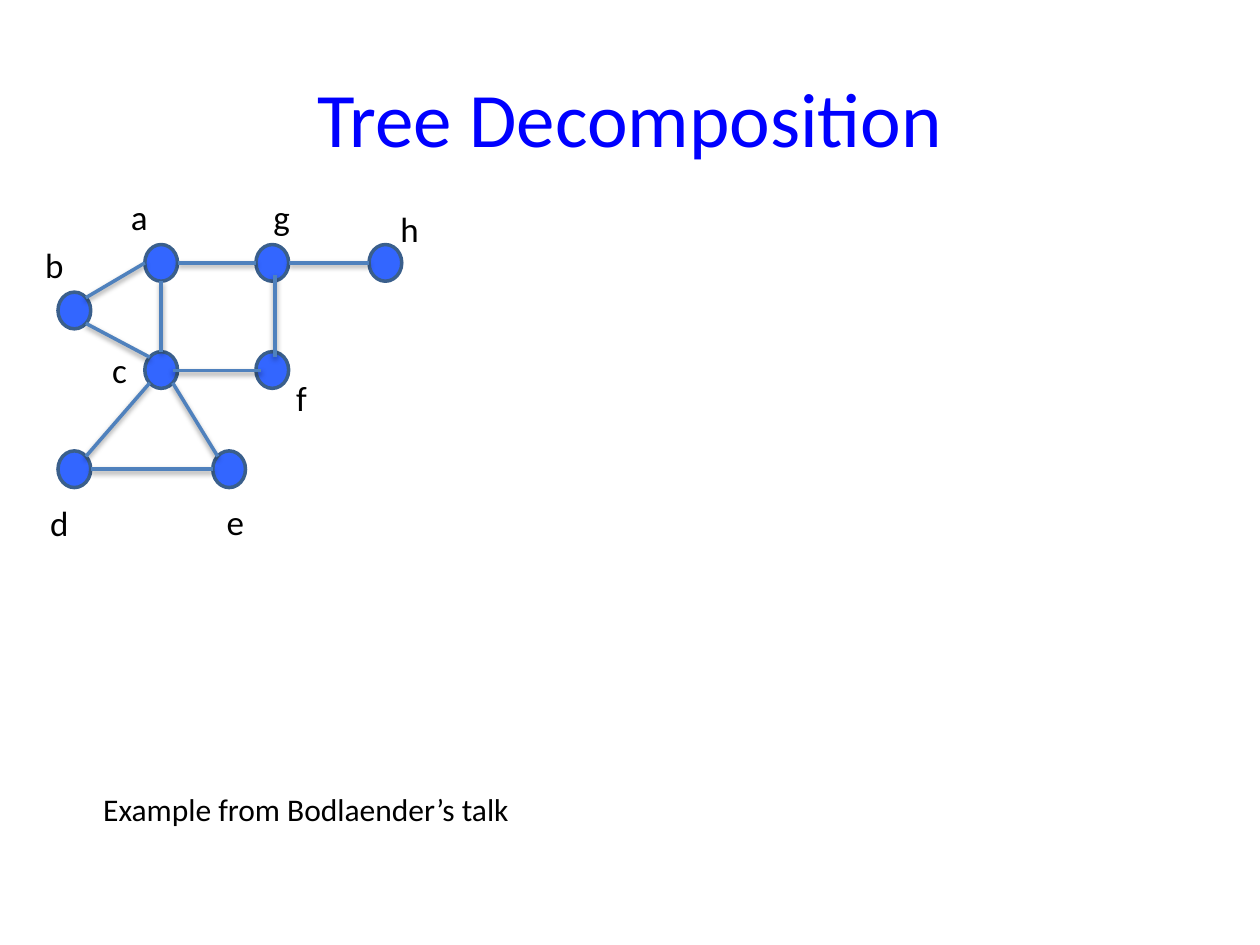
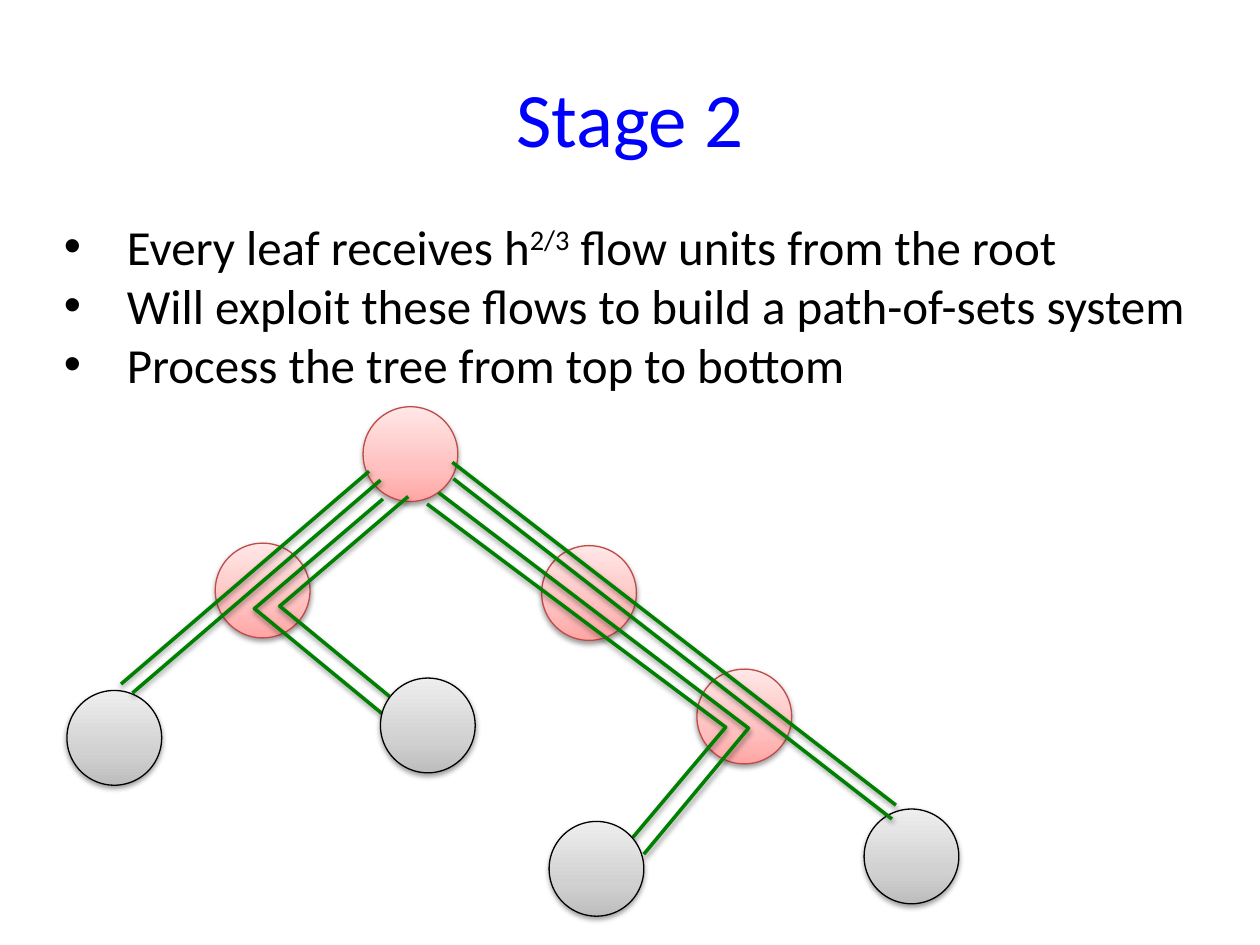
from lxml import etree
from pptx import Presentation
from pptx.dml.color import RGBColor
from pptx.enum import shapes, text
from pptx.oxml import ns
from pptx.util import Cm, Pt

FONT = "Calibri"
TITLE_BLUE = RGBColor(0x00, 0x00, 0xFF)
BLACK = RGBColor(0x00, 0x00, 0x00)
VERTEX_FILL = RGBColor(0x33, 0x66, 0xFF)
VERTEX_LINE = RGBColor(0x3A, 0x5F, 0x8C)
EDGE_BLUE = RGBColor(0x4F, 0x81, 0xBD)
FLOW_GREEN = RGBColor(0x00, 0x80, 0x00)
INNER_LINE = RGBColor(0xBF, 0x4C, 0x48)

# Gradient colours at 0, 35 and 100 percent, from bottom to top
STOPS = (0, 35, 100)
INNER_GRADIENT = [RGBColor(0xFF, 0xA6, 0xA5), RGBColor(0xFF, 0xC0, 0xBF), RGBColor(0xFF, 0xE7, 0xE7)]
LEAF_GRADIENT = [RGBColor(0xBD, 0xBD, 0xBD), RGBColor(0xD1, 0xD1, 0xD1), RGBColor(0xEE, 0xEE, 0xEE)]

# Graph on slide 1, in cm: left, top of each vertex, then left, top of its label
VERTEX_W, VERTEX_H = 0.66, 0.74
VERTICES = {
    "a": (2.92, 4.93, 2.39, 3.81),
    "b": (1.17, 5.89, 0.66, 4.78),
    "c": (2.92, 7.09, 2.01, 6.91),
    "d": (1.17, 9.09, 0.76, 9.98),
    "e": (4.29, 9.09, 4.32, 9.96),
    "f": (5.16, 7.09, 5.72, 7.47),
    "g": (5.16, 4.93, 5.26, 3.81),
    "h": (7.44, 4.93, 7.82, 4.06),
}
# Each edge leaves and enters a vertex at a compass point
EDGES = ["d NE c SW", "d E e W", "c SE e NW", "a E g W", "g E h W",
         "b NE a W", "b SE c NW", "a S c N"]
# Edges at f reach slightly inside their vertices
F_EDGES = [((3.48, 7.47), (5.26, 7.47)), ((5.54, 5.54), (5.54, 7.19))]

# Tree on slide 2, in cm
NODE_SIZE = 1.91
INNER_NODES = [(4.34, 10.95), (7.32, 8.2), (14.05, 13.49), (10.92, 11)]
BACK_LEAVES = [(1.35, 13.92), (17.42, 16.31)]
FRONT_LEAVES = [(11.07, 16.56), (7.67, 13.67)]
STRAIGHT_FLOWS = [
    ((7.44, 9.5), (2.44, 13.79)),
    ((7.67, 9.68), (2.67, 13.97)),
    ((9.12, 9.32), (18.06, 16.23)),
    ((9.14, 9.65), (17.98, 16.51)),
]
BENT_FLOWS = [
    [(8.84, 9.93), (15.09, 14.68), (12.98, 17.22)],
    [(8.61, 10.16), (14.63, 14.66), (12.6, 17.07)],
    [(7.72, 10.06), (5.13, 12.27), (7.72, 14.4)],
    [(8.23, 10.01), (5.64, 12.22), (8.23, 14.35)],
]


def add_child(parent, tag, **attributes):
    child = etree.SubElement(parent, ns.qn(tag))
    for key, value in attributes.items():
        child.set(key, str(value))
    return child


def add_text(slide, paragraphs, left, top, width, height, size=20, color=BLACK,
             align=None, anchor=text.MSO_ANCHOR.TOP, bullets=False):
    """Text between ^ marks is raised."""
    frame = slide.shapes.add_textbox(Cm(left), Cm(top), Cm(width), Cm(height)).text_frame
    frame.word_wrap = True
    frame.vertical_anchor = anchor
    for index, words in enumerate(paragraphs):
        paragraph = frame.paragraphs[0] if index == 0 else frame.add_paragraph()
        paragraph.alignment = align
        if bullets:
            props = paragraph._p.get_or_add_pPr()
            props.set("marL", str(Cm(1.27)))
            props.set("indent", str(-Cm(1.27)))
            add_child(props, "a:buFont", typeface="Arial")
            add_child(props, "a:buChar", char="•")
        for part, piece in enumerate(words.split("^")):
            run = paragraph.add_run()
            run.text = piece
            run.font.name, run.font.size = FONT, Pt(size)
            run.font.color.rgb = color
            if part % 2:
                run.font._element.set("baseline", "30000")


def add_title(slide, words):
    add_text(slide, [words], 1.27, 0.76, 22.86, 3.18, size=44, color=TITLE_BLUE,
             align=text.PP_ALIGN.CENTER, anchor=text.MSO_ANCHOR.MIDDLE)


def set_line(shape, color, width):
    shape.line.color.rgb = color
    shape.line.width = Pt(width)


def add_shadow(shape):
    properties = shape._element.spPr
    effects = properties.find(ns.qn("a:effectLst"))
    if effects is None:
        effects = add_child(properties, "a:effectLst")
    shadow = add_child(effects, "a:outerShdw", blurRad=Pt(3.1), dist=Pt(1.6),
                       dir=5400000, rotWithShape=0)
    add_child(add_child(shadow, "a:srgbClr", val=BLACK), "a:alpha", val=38000)


def add_ellipse(slide, left, top, width, height, line_color, line_width):
    ellipse = slide.shapes.add_shape(shapes.MSO_SHAPE.OVAL, Cm(left), Cm(top), Cm(width), Cm(height))
    set_line(ellipse, line_color, line_width)
    ellipse.shadow.inherit = False
    return ellipse


def add_vertex(slide, name):
    left, top, label_left, label_top = VERTICES[name]
    vertex = add_ellipse(slide, left, top, VERTEX_W, VERTEX_H, VERTEX_LINE, 2)
    vertex.fill.solid()
    vertex.fill.fore_color.rgb = VERTEX_FILL
    add_text(slide, [name], label_left, label_top, 1.24, 1.12)


def add_tree_node(slide, corner, gradient, line_color):
    node = add_ellipse(slide, *corner, NODE_SIZE, NODE_SIZE, line_color, 0.75)
    node.fill.gradient()
    node.fill.gradient_angle = 90
    stop_list = node._element.spPr.find(".//" + ns.qn("a:gsLst"))
    for stop in list(stop_list):
        stop_list.remove(stop)
    for percent, color in zip(STOPS, gradient):
        add_child(add_child(stop_list, "a:gs", pos=percent * 1000), "a:srgbClr", val=color)
    add_shadow(node)


def add_segment(slide, start, end, color):
    segment = slide.shapes.add_connector(
        shapes.MSO_CONNECTOR.STRAIGHT, *(Cm(value) for value in (*start, *end)))
    set_line(segment, color, 2)
    add_shadow(segment)


def add_bent_flow(slide, points):
    start, *rest = [(Cm(x), Cm(y)) for x, y in points]
    builder = slide.shapes.build_freeform(*start)
    builder.add_line_segments(rest, close=False)
    flow = builder.convert_to_shape()
    flow.fill.background()
    set_line(flow, FLOW_GREEN, 2)
    flow.shadow.inherit = False
    add_shadow(flow)


def rim_point(name, compass):
    """Point on the outline of a vertex in a compass direction."""
    left, top = VERTICES[name][:2]
    reach = 0.5 if len(compass) == 1 else 0.35
    across = ("E" in compass) - ("W" in compass)
    down = ("S" in compass) - ("N" in compass)
    return (left + VERTEX_W * (0.5 + reach * across),
            top + VERTEX_H * (0.5 + reach * down))


def build_decomposition(slide):
    add_title(slide, "Tree Decomposition")
    for name in VERTICES:
        add_vertex(slide, name)
    for edge in EDGES:
        source, leaving, target, entering = edge.split()
        add_segment(slide, rim_point(source, leaving), rim_point(target, entering), EDGE_BLUE)
    for start, end in F_EDGES:
        add_segment(slide, start, end, EDGE_BLUE)
    add_text(slide, ["Example from Bodlaender’s talk"], 1.83, 15.8, 9.78, 1.02, size=18)


def build_stage_two(slide):
    add_title(slide, "Stage 2")
    # Nodes behind the flows
    for corner in INNER_NODES:
        add_tree_node(slide, corner, INNER_GRADIENT, INNER_LINE)
    for corner in BACK_LEAVES:
        add_tree_node(slide, corner, LEAF_GRADIENT, BLACK)
    # Flows from the root to the leaves
    for start, end in STRAIGHT_FLOWS:
        add_segment(slide, start, end, FLOW_GREEN)
    for points in BENT_FLOWS:
        add_bent_flow(slide, points)
    # Leaves that cover the ends of the bent flows
    for corner in FRONT_LEAVES:
        add_tree_node(slide, corner, LEAF_GRADIENT, BLACK)
    add_text(slide, [
        "Every leaf receives h^2/3^ flow units from the root",
        "Will exploit these flows to build a path-of-sets system",
        "Process the tree from top to bottom",
    ], 1.04, 4.24, 23.47, 3.84, size=28, bullets=True)


def main():
    deck = Presentation()
    deck.slide_width, deck.slide_height = Cm(25.4), Cm(19.05)
    blank = deck.slide_layouts[6]
    for build in (build_decomposition, build_stage_two):
        build(deck.slides.add_slide(blank))
    deck.save("out.pptx")


if __name__ == "__main__":
    main()
